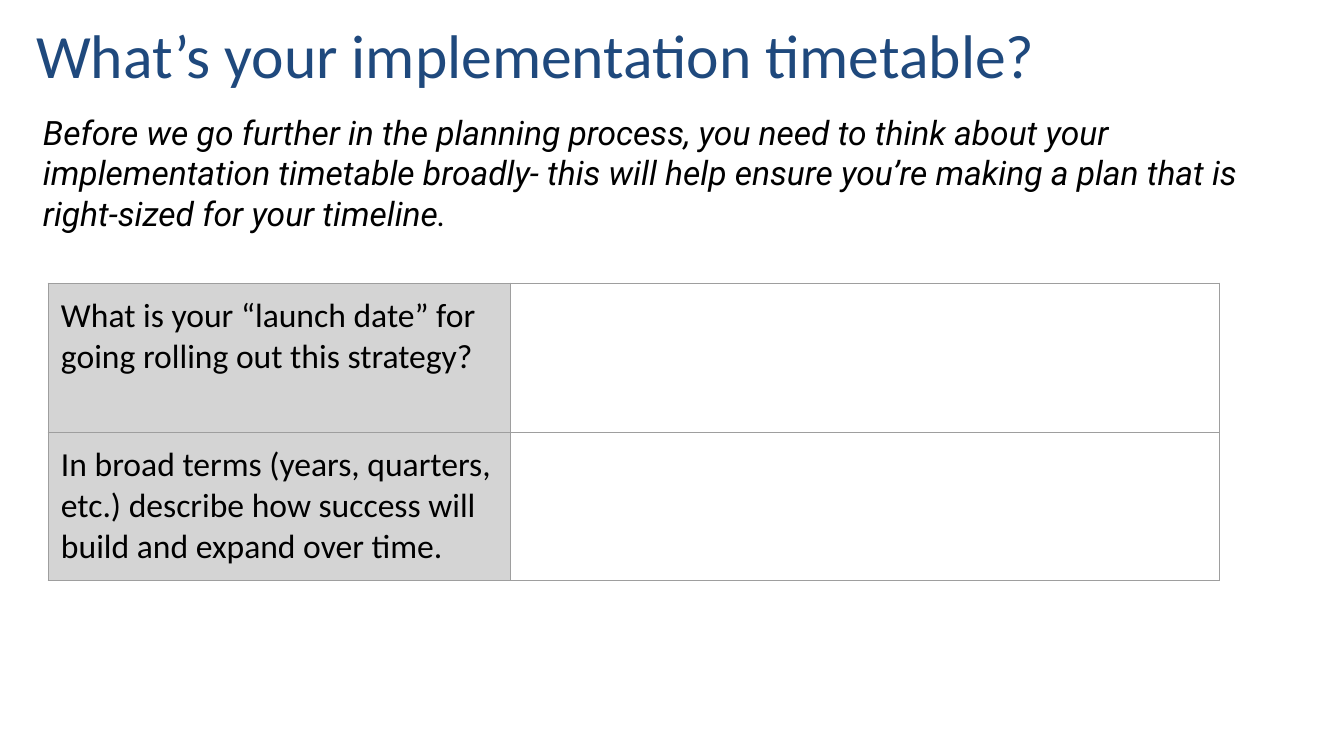
"""Builds the implementation timetable slide."""
import pptx
import pptx.dml.color
import pptx.enum.text
import pptx.oxml
import pptx.oxml.ns
import pptx.util

NAVY = pptx.dml.color.RGBColor(0x1F, 0x49, 0x7D)
BLACK = pptx.dml.color.RGBColor(0x00, 0x00, 0x00)
LABEL_GREY = pptx.dml.color.RGBColor(0xD4, 0xD4, 0xD4)
BORDER_GREY = pptx.dml.color.RGBColor(0x9E, 0x9E, 0x9E)

TITLE = "What’s your implementation timetable?"
INTRODUCTION = (
    "Before we go further in the planning process, you need to think about your "
    "implementation timetable broadly- this will help ensure you’re making a plan "
    "that is right-sized for your timeline."
)
QUESTIONS = [
    "What is your “launch date” for going rolling out this strategy?",
    "In broad terms (years, quarters, etc.) describe how success will build and "
    "expand over time.",
]


class TimetableSlide:
    """Holds the style and the current slide, and adds each kind of element."""

    EMU_PER_PX = 914400 / 100.8
    INSET = 13
    BORDER_POINTS = 0.75
    TITLE_FONT = {"name": "Calibri", "size": pptx.util.Pt(44)}
    INTRODUCTION_FONT = {"name": "Roboto", "size": pptx.util.Pt(24), "italic": True}
    QUESTION_FONT = {"name": "Calibri", "size": pptx.util.Pt(24)}

    def __init__(self, deck):
        """Add a title-only page to the deck."""
        deck.slide_width, deck.slide_height = self.px(1344), self.px(756)
        self.page = deck.slides.add_slide(deck.slide_layouts[5])

    def px(self, length):
        """Turn pixels into EMU."""
        return pptx.util.Emu(round(length * self.EMU_PER_PX))

    def apply(self, target, values):
        """Set each named attribute on the target."""
        for name, value in values.items():
            setattr(target, name, value)

    def margins(self):
        """Return the inset for all four sides."""
        sides = ("left", "top", "right", "bottom")
        return {f"margin_{side}": self.px(self.INSET) for side in sides}

    def add_text(self, frame, text, font, color):
        """Fill a frame with one left-aligned paragraph and return it."""
        para = frame.paragraphs[0]
        para.alignment = pptx.enum.text.PP_ALIGN.LEFT
        span = para.add_run()
        span.text = text
        self.apply(span.font, font)
        span.font.color.rgb = color
        return para

    def fit_frame(self, frame):
        """Give a text frame wrapping, insets and a top anchor."""
        self.apply(frame, {
            **self.margins(),
            "word_wrap": True,
            "auto_size": pptx.enum.text.MSO_AUTO_SIZE.NONE,
            "vertical_anchor": pptx.enum.text.MSO_ANCHOR.TOP,
        })

    def add_title(self, text, left, top, width, height):
        """Move and fill the title placeholder."""
        title = self.page.shapes.title
        place = {"left": left, "top": top, "width": width, "height": height}
        self.apply(title, {name: self.px(value) for name, value in place.items()})
        self.fit_frame(title.text_frame)
        para = self.add_text(title.text_frame, text, self.TITLE_FONT, NAVY)
        para.line_spacing = 0.9

    def add_introduction(self, text, *place):
        """Add the introductory text box."""
        box = self.page.shapes.add_textbox(*map(self.px, place))
        self.fit_frame(box.text_frame)
        self.add_text(box.text_frame, text, self.INTRODUCTION_FONT, BLACK)

    def add_borders(self, cell):
        """Draw a thin grey line on each side of a cell."""
        properties = cell._tc.get_or_add_tcPr()
        width = pptx.util.Pt(self.BORDER_POINTS)
        for side in "LRTB":
            properties.append(pptx.oxml.parse_xml(
                f'<a:ln{side} {pptx.oxml.ns.nsdecls("a")} w="{width}">'
                f'<a:solidFill><a:srgbClr val="{BORDER_GREY}"/></a:solidFill>'
                f'</a:ln{side}>'
            ))

    def add_questions(self, questions, left, top, column_widths, row_height):
        """Add a table with a question and an empty answer in each row."""
        place = (left, top, sum(column_widths), row_height * len(questions))
        table = self.page.shapes.add_table(
            len(questions), len(column_widths), *map(self.px, place)
        ).table
        self.apply(table, {"first_row": False, "horz_banding": False})
        for column, width in zip(table.columns, column_widths):
            column.width = self.px(width)
        for cell in table.iter_cells():
            self.apply(cell, self.margins())
            self.add_borders(cell)
            cell.fill.background()
        for row, question in enumerate(questions):
            cell = table.cell(row, 0)
            cell.fill.solid()
            cell.fill.fore_color.rgb = LABEL_GREY
            self.add_text(cell.text_frame, question, self.QUESTION_FONT, BLACK)


def main():
    """Build and save the deck."""
    deck = pptx.Presentation()
    slide = TimetableSlide(deck)
    slide.add_title(TITLE, 23, 12, 1287, 73)
    slide.add_questions(QUESTIONS, 48, 283, (462, 710), 149)
    slide.add_introduction(INTRODUCTION, 30, 99, 1272, 102)
    deck.save("out.pptx")


if __name__ == "__main__":
    main()
